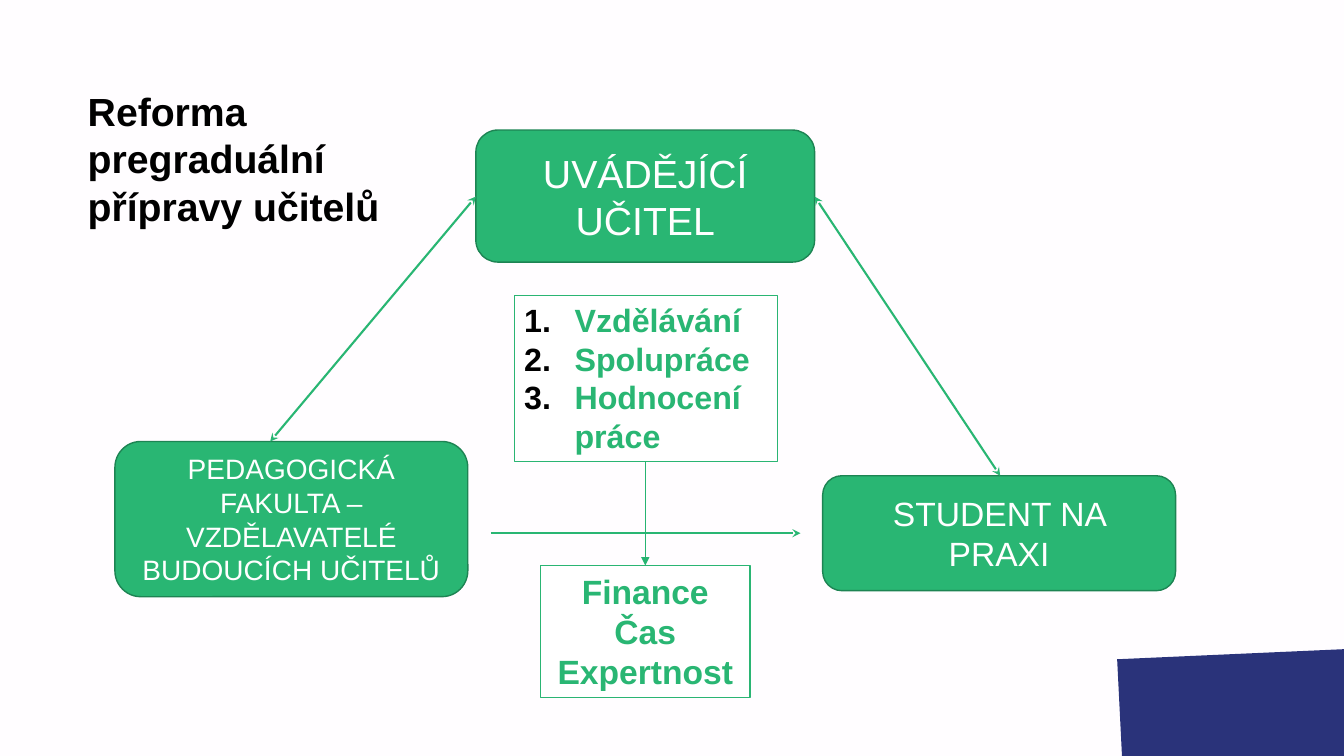
from lxml import etree
from pptx import Presentation
from pptx.dml.color import RGBColor
from pptx.enum.shapes import MSO_CONNECTOR, MSO_SHAPE
from pptx.enum.text import MSO_ANCHOR, MSO_AUTO_SIZE, PP_ALIGN
from pptx.oxml.ns import qn
from pptx.util import Inches, Pt

LINE = MSO_CONNECTOR.STRAIGHT
RECT, ROUND = MSO_SHAPE.RECTANGLE, MSO_SHAPE.ROUNDED_RECTANGLE
TOP, MIDDLE = MSO_ANCHOR.TOP, MSO_ANCHOR.MIDDLE
LEFT, CENTER = PP_ALIGN.LEFT, PP_ALIGN.CENTER
FIXED = MSO_AUTO_SIZE.NONE

PAPER = RGBColor(0xFF, 0xFD, 0xFF)
WHITE = RGBColor(0xFF, 0xFF, 0xFF)
BLACK = RGBColor(0x00, 0x00, 0x00)
NAVY = RGBColor(0x2A, 0x33, 0x7A)
GREEN = RGBColor(0x29, 0xB6, 0x73)
FOREST = RGBColor(0x1D, 0x84, 0x53)
BORDER = RGBColor(0x2A, 0xB5, 0x73)
STEM = RGBColor(0x26, 0xB4, 0x71)


def number(para):
    props = para._p.get_or_add_pPr()
    props.set("marL", str(Inches(0.5)))
    props.set("indent", str(Inches(-0.5)))
    color = etree.SubElement(props, qn("a:buClr"))
    etree.SubElement(color, qn("a:srgbClr"), val=str(BLACK))
    etree.SubElement(props, qn("a:buFont"), typeface="+mj-lt")
    etree.SubElement(props, qn("a:buAutoNum"), type="arabicPeriod")


def write(shape, lines, size, color, bold=False, align=CENTER, anchor=TOP, listed=False):
    frame = shape.text_frame
    frame.word_wrap = True
    frame.auto_size = FIXED
    frame.vertical_anchor = anchor
    for i, text in enumerate(lines):
        para = frame.add_paragraph() if i else frame.paragraphs[0]
        para.alignment = align
        if listed:
            number(para)
        run = para.add_run()
        run.text = text
        run.font.name = "Arial"
        run.font.size = Pt(size)
        run.font.bold = bold
        run.font.color.rgb = color


def add_box(slide, kind, place, fill, edge):
    box = slide.shapes.add_shape(kind, *map(Inches, place))
    box.shadow.inherit = False
    box.fill.solid()
    box.fill.fore_color.rgb = fill
    box.line.color.rgb = edge
    box.line.width = Pt(1)
    return box


def add_role(slide, place, text, size):
    box = add_box(slide, ROUND, place, GREEN, FOREST)
    write(box, [text], size, WHITE, anchor=MIDDLE)


def add_note(slide, place, lines, size, **style):
    box = add_box(slide, RECT, place, WHITE, BORDER)
    write(box, lines, size, GREEN, bold=True, **style)


def add_arrow(slide, start, end, color=GREEN, width=1.5, tip="stealth", both=False):
    arrow = slide.shapes.add_connector(LINE, *map(Inches, start + end))
    arrow.line.color.rgb = color
    arrow.line.width = Pt(width)
    ln = arrow.line._get_or_add_ln()
    if both:
        etree.SubElement(ln, qn("a:headEnd"), type=tip)
    etree.SubElement(ln, qn("a:tailEnd"), type=tip)
    etree.SubElement(arrow._element.spPr, qn("a:effectLst"))


def add_corner(slide):
    points = [(Inches(x), Inches(y)) for x, y in
              [(11.08, 6.54), (13.33, 6.44), (13.33, 7.56), (11.13, 7.54)]]
    path = slide.shapes.build_freeform(*points[0])
    path.add_line_segments(points[1:])
    corner = path.convert_to_shape()
    corner.shadow.inherit = False
    corner.fill.solid()
    corner.fill.fore_color.rgb = NAVY
    corner.line.fill.background()


def add_title(slide, place, text):
    title = slide.shapes.title
    title.left, title.top, title.width, title.height = map(Inches, place)
    write(title, [text], 28, BLACK, bold=True, align=LEFT)


def main():
    deck = Presentation()
    deck.slide_width, deck.slide_height = Inches(13.33), Inches(7.5)
    slide = deck.slides.add_slide(deck.slide_layouts[5])
    slide.background.fill.solid()
    slide.background.fill.fore_color.rgb = PAPER

    add_corner(slide)
    add_title(slide, (0.77, 0.82, 3.5, 1.51), "Reforma pregraduální přípravy učitelů")
    add_role(slide, (4.72, 1.29, 3.36, 1.31), "UVÁDĚJÍCÍ UČITEL", 28)
    add_role(slide, (1.14, 4.38, 3.5, 1.54),
             "PEDAGOGICKÁ FAKULTA – VZDĚLAVATELÉ BUDOUCÍCH UČITELŮ", 20)
    add_role(slide, (8.16, 4.72, 3.5, 1.14), "STUDENT NA PRAXI", 24)
    add_arrow(slide, (8.08, 1.95), (9.92, 4.72), both=True)
    add_arrow(slide, (4.87, 5.29), (7.94, 5.29))
    add_arrow(slide, (2.68, 4.38), (4.72, 1.95), both=True)
    add_note(slide, (5.1, 2.93, 2.61, 1.65),
             ["Vzdělávání", "Spolupráce", "Hodnocení práce"], 23, align=LEFT, listed=True)
    add_note(slide, (5.36, 5.61, 2.08, 1.31), ["Finance", "Čas", "Expertnost"], 24)
    add_arrow(slide, (6.4, 4.58), (6.4, 5.61), STEM, 0.75, "triangle")
    deck.save("out.pptx")


if __name__ == "__main__":
    main()
